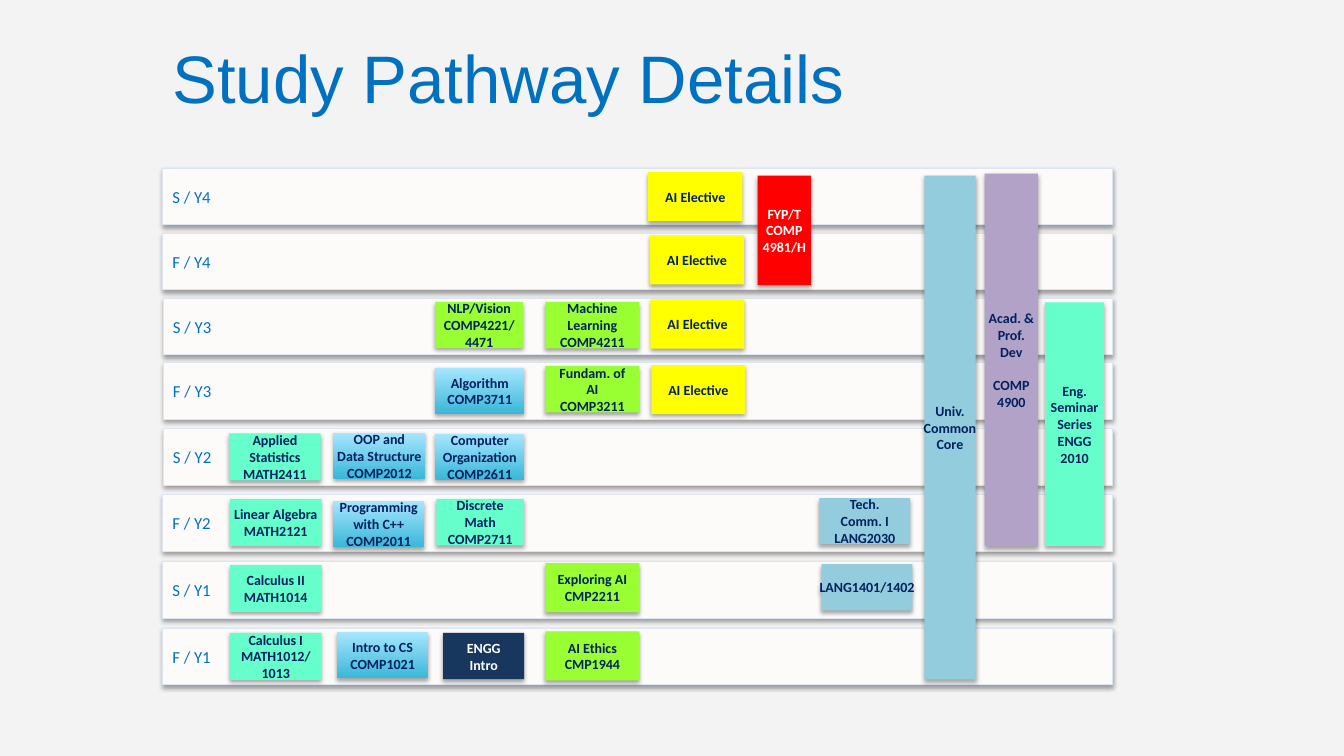
from lxml import etree
from pptx import Presentation
from pptx.dml.color import RGBColor
from pptx.enum.shapes import MSO_SHAPE as Shape
from pptx.enum.text import MSO_ANCHOR as Anchor, PP_ALIGN as Align
from pptx.oxml.ns import qn
from pptx.util import Pt

BLUE, NAVY, WHITE = "0070C0", "002060", "FFFFFF"
MINT, LIME, YELLOW, TEAL = "66FFCC", "99FF33", "FFFF00", "93CDDD"
SKY = ("39B7D8", "A7E6FF")  # bottom to top

# Semester bands: label, left, top
SEMESTERS = [
    ("S / Y4", 116, 120.2), ("F / Y4", 116, 166.5),
    ("S / Y3", 116.5, 213), ("F / Y3", 116.5, 259.2),
    ("S / Y2", 116.5, 306.2), ("F / Y2", 116, 353.3),
    ("S / Y1", 116, 401), ("F / Y1", 116, 448.7),
]

# Courses by colour and size: fill, width, height, [(left, top, text)]
COURSES = [
    (MINT, 65.5, 33.6, [
        (164.2, 452, "Calculus I\nMATH1012/\n1013"),
        (164.2, 403.5, "Calculus II\nMATH1014"),
        (164.2, 356.4, "Linear Algebra\nMATH2121"),
        (163.6, 309.5, "Applied\nStatistics\nMATH2411")]),
    (SKY, 65.5, 33.2, [
        (240.5, 451.4, "Intro to CS\nCOMP1021"),
        (237.7, 357.8, "Programming\nwith C++\nCOMP2011"),
        (238.2, 309, "OOP and\nData Structure\nCOMP2012")]),
    (SKY, 63.4, 33, [
        (311, 309.8, "Computer\nOrganization\nCOMP2611"),
        (311, 262.8, "Algorithm\nCOMP3711")]),
    (MINT, 62.6, 33.2, [(311.7, 356.4, "Discrete\nMath\nCOMP2711")]),
    (LIME, 62.6, 33, [(311, 215.7, "NLP/Vision\nCOMP4221/\n4471")]),
    (LIME, 67.2, 33.2, [
        (389.5, 261.4, "Fundam. of\nAI\nCOMP3211"),
        (389.5, 215.7, "Machine\nLearning\nCOMP4211")]),
    (LIME, 67.2, 35, [
        (389.5, 451, "AI Ethics\nCMP1944"),
        (389.5, 402.3, "Exploring AI\nCMP2211")]),
    (YELLOW, 67.2, 35, [
        (465.2, 260.8, "AI Elective"), (464.6, 214, "AI Elective"),
        (464.2, 168.2, "AI Elective"), (463, 123, "AI Elective")]),
    (TEAL, 65, 33, [
        (585.2, 355.8, "Tech.\nComm. I\nLANG2030"),
        (586.8, 403, "LANG1401/1402")]),
    # Programmes that span several semesters
    (TEAL, 36.7, 360, [(660.2, 125.4, "Univ.\nCommon\nCore")]),
    (MINT, 42, 174, [(746.6, 216, "Eng.\nSeminar\nSeries\nENGG\n2010")]),
]


def rgb(value):
    return RGBColor.from_string(value)


def write(shape, text, size=10, font="Calibri", color=NAVY, bold=False,
          align=Align.LEFT, wrap=True, gaps=None):
    """Write one paragraph per line; gaps maps line index to space before."""
    frame = shape.text_frame
    frame.word_wrap = wrap
    frame.vertical_anchor = Anchor.MIDDLE
    for index, line in enumerate(text.split("\n")):
        paragraph = frame.add_paragraph() if index else frame.paragraphs[0]
        paragraph.alignment = align
        if gaps and index in gaps:
            paragraph.space_before = Pt(gaps[index])
        run = paragraph.add_run()
        run.text = line
        run.font.size, run.font.name, run.font.bold = Pt(size), font, bold
        run.font.color.rgb = rgb(color)


def add_shadow(shape, blur, distance):
    shape.shadow.inherit = False
    effects = shape._element.spPr.find(qn("a:effectLst"))
    shadow = etree.SubElement(
        effects, qn("a:outerShdw"), blurRad=str(Pt(blur)),
        dist=str(Pt(distance)), dir="5400000", rotWithShape="0")
    black = etree.SubElement(shadow, qn("a:srgbClr"), val="000000")
    etree.SubElement(black, qn("a:alpha"), val="35000")


def add_block(slide, left, top, width, height, fill, border=None,
              blur=3.15, distance=1.8):
    block = slide.shapes.add_shape(
        Shape.RECTANGLE, Pt(left), Pt(top), Pt(width), Pt(height))
    if isinstance(fill, tuple):
        block.fill.gradient()
        block.fill.gradient_angle = 90
        for stop, color in zip(block.fill.gradient_stops, fill):
            stop.color.rgb = rgb(color)
    else:
        block.fill.solid()
        block.fill.fore_color.rgb = rgb(fill)
    if border:
        block.line.color.rgb = rgb(border)
        block.line.width = Pt(0.75)
    else:
        block.line.fill.background()
    add_shadow(block, blur, distance)
    return block


def add_semester(slide, label, left, top):
    band = add_block(slide, left, top, 678.5, 40.5, "FCFBF9", border="DCE6F2")
    write(band, label, size=12, color=BLUE)


def add_course(slide, left, top, width, height, fill, text, color=NAVY,
               gaps=None, **shadow):
    course = add_block(slide, left, top, width, height, fill, **shadow)
    write(course, text, color=color, bold=True, align=Align.CENTER,
          wrap=False, gaps=gaps)


def main():
    deck = Presentation()
    deck.slide_width, deck.slide_height = Pt(960), Pt(540)
    slide = deck.slides.add_slide(deck.slide_layouts[6])
    slide.background.fill.solid()
    slide.background.fill.fore_color.rgb = rgb("F3F3F3")

    # Title
    title = slide.shapes.add_textbox(Pt(116), Pt(31), Pt(724), Pt(47))
    write(title, "Study Pathway Details", size=48, font="Arial", color=BLUE)

    # Timetable
    for label, left, top in SEMESTERS:
        add_semester(slide, label, left, top)
    for fill, width, height, entries in COURSES:
        for left, top, text in entries:
            add_course(slide, left, top, width, height, fill, text)

    # Courses with their own styling
    add_course(slide, 316.6, 452, 57.8, 33.2, "17375E", "ENGG\nIntro",
               color=WHITE)
    add_course(slide, 541.2, 125.4, 38, 78.2, "FF0000", "FYP/T\nCOMP\n4981/H",
               color=WHITE, blur=3.5, distance=2.2)
    add_course(slide, 703.4, 124, 38, 266.2, "B3A2C7",
               "Acad. &\nProf.\nDev\nCOMP\n4900", gaps={3: 12})

    deck.save("out.pptx")


if __name__ == "__main__":
    main()
